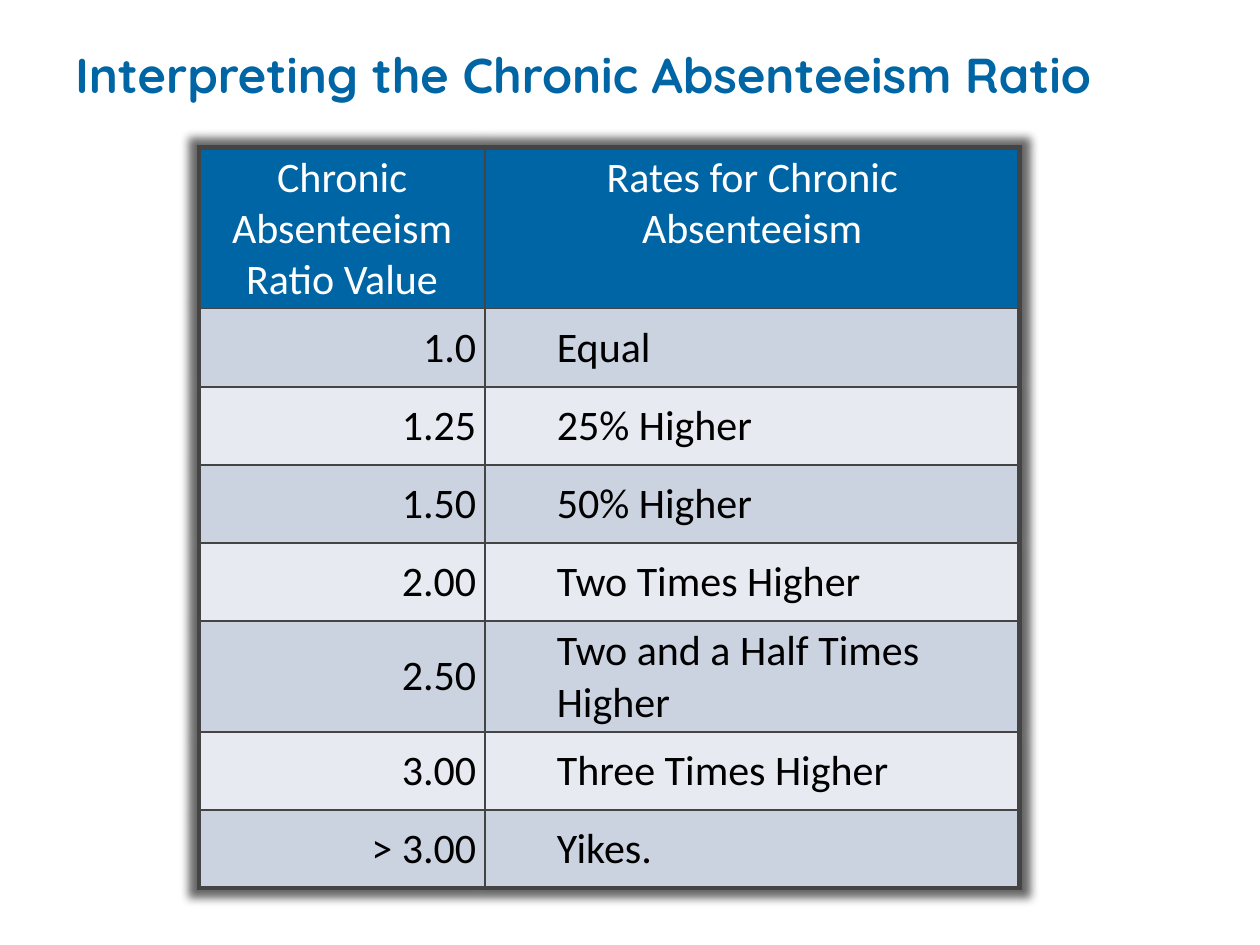
from lxml.etree import SubElement
from pptx import Presentation
from pptx.dml.color import RGBColor
from pptx.enum.text import MSO_ANCHOR as Anchor, PP_ALIGN as Align
from pptx.oxml import parse_xml
from pptx.oxml.ns import nsdecls, qn
from pptx.util import Inches, Pt

TITLE = "Interpreting the Chronic Absenteeism Ratio"
ROWS = [
    ("Chronic Absenteeism Ratio Value", "Rates for Chronic Absenteeism"),
    ("1.0", "Equal"),
    ("1.25", "25% Higher"),
    ("1.50", "50% Higher"),
    ("2.00", "Two Times Higher"),
    ("2.50", "Two and a Half Times Higher"),
    ("3.00", "Three Times Higher"),
    ("> 3.00", "Yikes."),
]
COLUMN_WIDTHS = (2.27, 4.24)
ROW_HEIGHT = 0.62
COLORS = {
    "blue": "0065A4", "white": "FFFFFF", "black": "000000",
    "border": "444444", "odd": "CCD3E0", "even": "E7EAF0",
}


def color(name):
    return RGBColor.from_string(COLORS[name])


def style_font(paragraph, name, size, color_name, bold=False):
    font = paragraph.font
    font.name, font.size, font.bold = name, Pt(size), bold
    font.color.rgb = color(color_name)


def add_borders(cell, widths):
    properties = cell._tc.get_or_add_tcPr()
    for side, width in widths.items():
        line = SubElement(properties, qn(f"a:ln{side}"), w=str(Pt(width)))
        fill = SubElement(line, qn("a:solidFill"))
        SubElement(fill, qn("a:srgbClr"), val=COLORS["border"])


def add_table_shadow(table):
    table._tbl.tblPr.insert(0, parse_xml(
        f'<a:effectLst {nsdecls("a")}>'
        '<a:outerShdw blurRad="63500" sx="102000" sy="102000" algn="ctr" rotWithShape="0">'
        f'<a:srgbClr val="{COLORS["black"]}"><a:alpha val="60000"/></a:srgbClr>'
        '</a:outerShdw></a:effectLst>'))


def fill_cell(cell, text, row, column):
    header = row == 0
    add_borders(cell, {
        "L": 3 if column == 0 else 1,
        "R": 3 if column == len(COLUMN_WIDTHS) - 1 else 1,
        "T": 3 if header else 1,
        "B": 3 if row == len(ROWS) - 1 else 1,
    })
    cell.fill.solid()
    cell.fill.fore_color.rgb = color("blue" if header else "odd" if row % 2 else "even")
    cell.margin_left = cell.margin_right = Inches(0.07)
    cell.margin_top = cell.margin_bottom = Inches(0.04)
    cell.vertical_anchor = Anchor.TOP if header else Anchor.MIDDLE
    cell.text = text
    paragraph = cell.text_frame.paragraphs[0]
    if header:
        paragraph.alignment = Align.CENTER
    elif column == 0:
        paragraph.alignment = Align.RIGHT
    else:
        paragraph.level = 1
        properties = paragraph._p.get_or_add_pPr()
        properties.set("marL", str(Inches(0.5)))
        properties.set("indent", "0")
    style_font(paragraph, "Calibri", 24, "white" if header else "black")


presentation = Presentation()
presentation.slide_width, presentation.slide_height = Inches(10), Inches(7.5)
slide = presentation.slides.add_slide(presentation.slide_layouts[6])

title = slide.shapes.add_textbox(Inches(0.5), Inches(0.3), Inches(9), Inches(1.12))
title.text_frame.word_wrap = True
title.text_frame.text = TITLE
style_font(title.text_frame.paragraphs[0], "Quicksand", 28, "blue", bold=True)

table = slide.shapes.add_table(
    len(ROWS), len(COLUMN_WIDTHS), Inches(1.58), Inches(1.17),
    Inches(sum(COLUMN_WIDTHS)), Inches(ROW_HEIGHT * len(ROWS))).table
add_table_shadow(table)
for table_column, width in zip(table.columns, COLUMN_WIDTHS):
    table_column.width = Inches(width)
for row, texts in enumerate(ROWS):
    table.rows[row].height = Inches(ROW_HEIGHT)
    for column, text in enumerate(texts):
        fill_cell(table.cell(row, column), text, row, column)

presentation.save("out.pptx")
